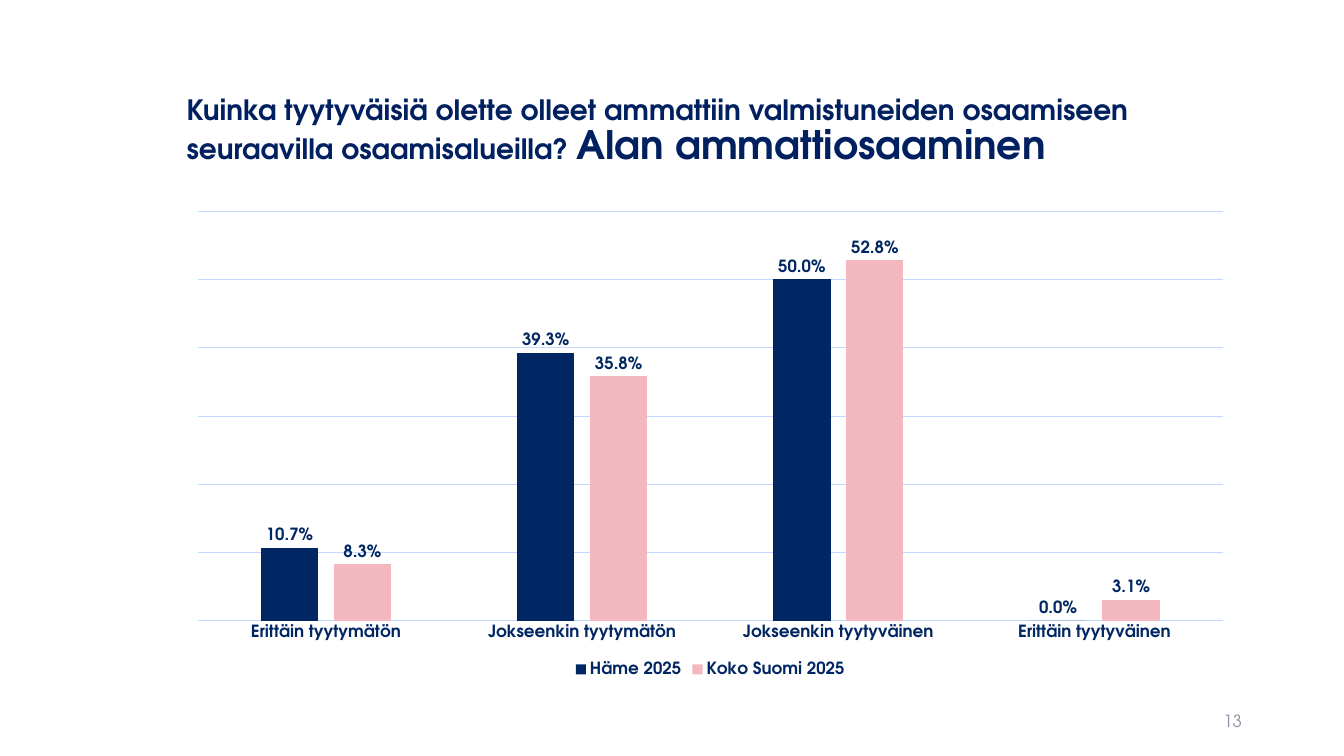
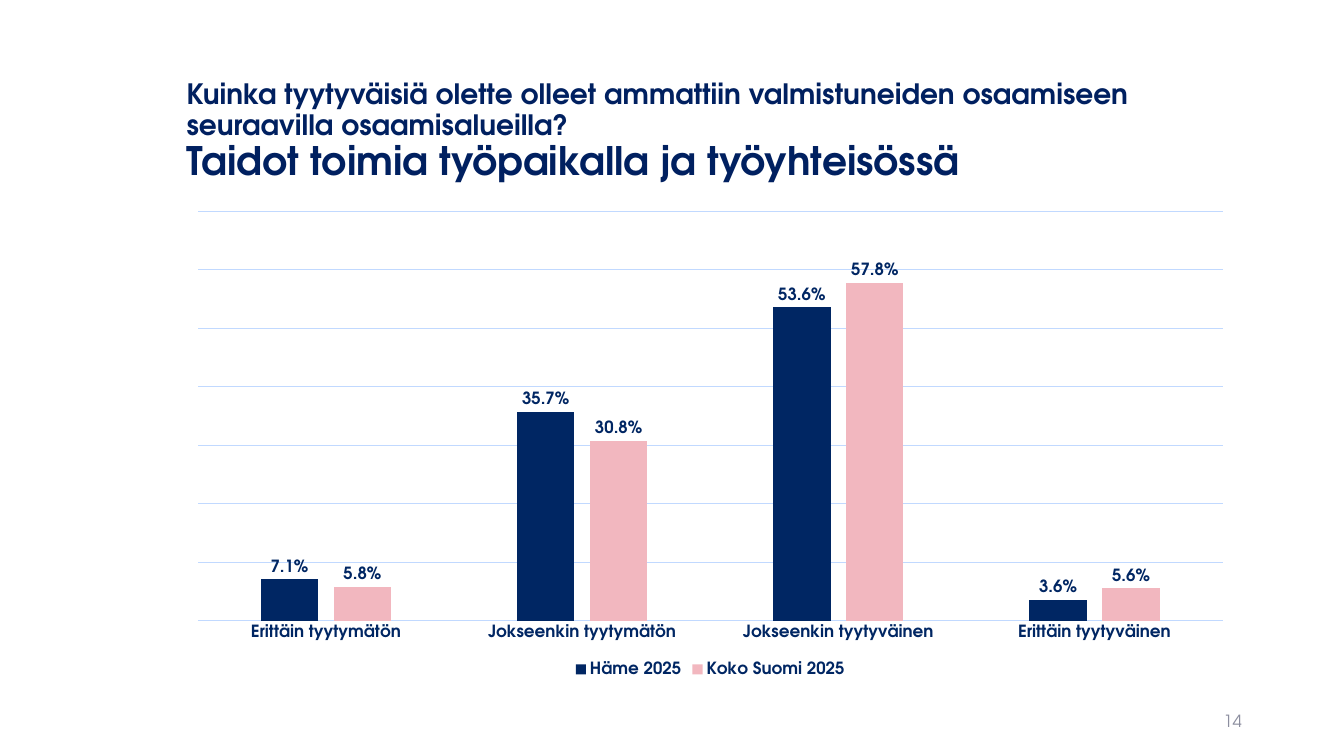
"""Build two slides comparing employer satisfaction in Häme and all of Finland."""
from pptx import Presentation
from pptx.chart.data import CategoryChartData
from pptx.dml.color import RGBColor
from pptx.enum import chart as ch, text as tx
from pptx.util import Cm, Pt

FONT = "TeX Gyre Adventor"
TITLE_NAVY = RGBColor(0x00, 0x20, 0x60)
NAVY = RGBColor(0x00, 0x26, 0x63)
PINK = RGBColor(0xF2, 0xB7, 0xBF)
GRID_BLUE = RGBColor(0xC1, 0xD9, 0xFF)
GREY = RGBColor(0x8C, 0x8E, 0x9F)

LEFT, WIDTH = Cm(4.45), Cm(26.9)
QUESTION = ("Kuinka tyytyväisiä olette olleet ammattiin valmistuneiden "
            "osaamiseen seuraavilla osaamisalueilla? ")
ANSWERS = ["Erittäin tyytymätön", "Jokseenkin tyytymätön",
           "Jokseenkin tyytyväinen", "Erittäin tyytyväinen"]
REGIONS = [("Häme 2025", NAVY), ("Koko Suomi 2025", PINK)]
TOPICS = [
    (13, "", "Alan ammattiosaaminen", 0.6,
     [(0.107, 0.393, 0.5, 0), (0.083, 0.358, 0.528, 0.031)]),
    (14, "\v", "Taidot toimia työpaikalla ja työyhteisössä", 0.7,
     [(0.071, 0.357, 0.536, 0.036), (0.058, 0.308, 0.578, 0.056)]),
]


def set_font(font, size, color, bold):
    font.name = FONT
    font.size = Pt(size)
    font.bold = bold
    font.color.rgb = color


prs = Presentation()
prs.slide_width, prs.slide_height = Cm(33.87), Cm(19.05)

for number, line_break, topic, axis_top, shares in TOPICS:
    slide = prs.slides.add_slide(prs.slide_layouts[5])

    heading = slide.shapes.title
    heading.left, heading.top, heading.width, heading.height = LEFT, Cm(2.62), WIDTH, Cm(1.42)
    frame = heading.text_frame
    frame.word_wrap = True
    frame.auto_size = tx.MSO_AUTO_SIZE.NONE
    frame.vertical_anchor = tx.MSO_ANCHOR.MIDDLE
    paragraph = frame.paragraphs[0]
    paragraph.text = QUESTION + line_break
    paragraph.alignment = tx.PP_ALIGN.LEFT
    paragraph.line_spacing = 0.9
    paragraph.add_run().text = topic
    for run in paragraph.runs:
        set_font(run.font, 28 if run.text == topic else 20, TITLE_NAVY, True)

    page_number = slide.shapes.add_textbox(Cm(23.93), Cm(17.65), Cm(7.62), Cm(1.02)).text_frame
    page_number.word_wrap = True
    page_number.vertical_anchor = tx.MSO_ANCHOR.MIDDLE
    page_number.text = str(number)
    page_number.paragraphs[0].alignment = tx.PP_ALIGN.RIGHT
    set_font(page_number.paragraphs[0].runs[0].font, 12, GREY, False)

    satisfaction = CategoryChartData(number_format="0.0%")
    satisfaction.categories = ANSWERS
    for (region, _), values in zip(REGIONS, shares):
        satisfaction.add_series(region, values)
    chart = slide.shapes.add_chart(ch.XL_CHART_TYPE.COLUMN_CLUSTERED, LEFT, Cm(5.08),
                                   WIDTH, Cm(12.09), satisfaction).chart
    set_font(chart.font, 12, NAVY, True)
    chart.has_title = False
    chart.has_legend = True
    chart.legend.position = ch.XL_LEGEND_POSITION.BOTTOM
    chart.legend.include_in_layout = False
    set_font(chart.legend.font, 12, NAVY, True)

    answer_axis = chart.category_axis
    answer_axis.major_tick_mark = ch.XL_TICK_MARK.NONE
    set_font(answer_axis.tick_labels.font, 12, NAVY, True)
    share_axis = chart.value_axis
    share_axis.visible = False
    share_axis.minimum_scale, share_axis.maximum_scale = 0, axis_top
    share_axis.major_unit = 0.1
    share_axis.has_major_gridlines = True
    for line in (answer_axis.format.line, share_axis.major_gridlines.format.line):
        line.color.rgb = GRID_BLUE
        line.width = Pt(0.75)

    columns = chart.plots[0]
    columns.gap_width, columns.overlap = 219, -27
    columns.vary_by_categories = False
    for series, (_, color) in zip(columns.series, REGIONS):
        series.format.fill.solid()
        series.format.fill.fore_color.rgb = color
        labels = series.data_labels
        labels.show_value = True
        labels.position = ch.XL_LABEL_POSITION.OUTSIDE_END
        labels.number_format = "0.0%"
        labels.number_format_is_linked = False
        set_font(labels.font, 12, NAVY, True)

prs.save("out.pptx")
